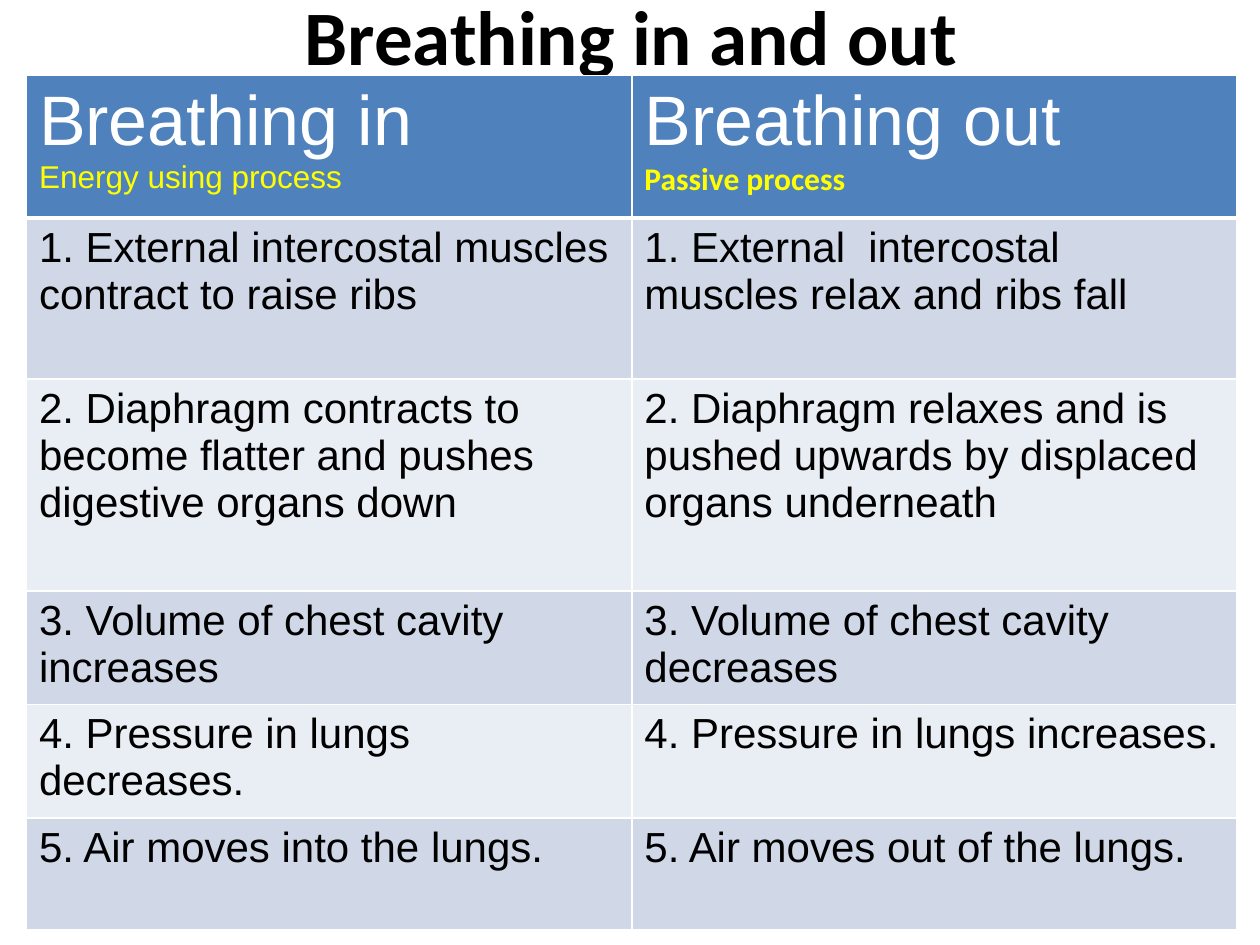
from lxml.etree import SubElement
from pptx import Presentation
from pptx.dml.color import RGBColor
from pptx.enum.text import MSO_ANCHOR as Anchor, PP_ALIGN as Align
from pptx.oxml.ns import qn
from pptx.util import Inches, Pt

BLACK, WHITE, YELLOW = "000000", "FFFFFF", "FFFF00"
HEADER_BLUE, BAND_DARK, BAND_LIGHT = "4F81BD", "D0D8E8", "E9EDF4"

HEADINGS = [
    ("Breathing in", "Energy using process", "Arial", False),
    ("Breathing out", "Passive process", "Calibri", True),
]
STEPS = [
    ("1. External intercostal muscles contract to raise ribs",
     "1. External  intercostal muscles relax and ribs fall"),
    ("2. Diaphragm contracts to become flatter and pushes digestive organs down",
     "2. Diaphragm relaxes and is pushed upwards by displaced organs underneath"),
    ("3. Volume of chest cavity increases", "3. Volume of chest cavity decreases"),
    ("4. Pressure in lungs decreases.", "4. Pressure in lungs increases."),
    ("5. Air moves into the lungs.", "5. Air moves out of the lungs."),
]
ROW_HEIGHTS = [11.3, 12.8, 16.8, 9, 9, 8.9]


def color(hex_string):
    return RGBColor.from_string(hex_string)


class Deck:
    """Holds the slide and its style; lengths count squares of a 100 by 75 grid."""

    columns, rows = 100, 75

    def __init__(self):
        self.presentation = Presentation()
        self.presentation.slide_width = Inches(10)
        self.presentation.slide_height = Inches(7.5)
        self.slide = self.presentation.slides.add_slide(self.presentation.slide_layouts[6])

    def across(self, count):
        return round(self.presentation.slide_width * count / self.columns)

    def down(self, count):
        return round(self.presentation.slide_height * count / self.rows)

    def box(self, left, top, width, height):
        return self.across(left), self.down(top), self.across(width), self.down(height)

    def set_lines(self, frame, lines):
        """Fill a text frame; each line is (text, size, font name, colour, bold)."""
        for number, (text, size, name, ink, bold) in enumerate(lines):
            paragraph = frame.add_paragraph() if number else frame.paragraphs[0]
            paragraph.text = text
            font = paragraph.font
            font.size, font.name, font.bold = Pt(size), name, bold
            font.color.rgb = color(ink)

    def title(self, text, *place):
        frame = self.slide.shapes.add_textbox(*self.box(*place)).text_frame
        frame.word_wrap = True
        frame.vertical_anchor = Anchor.MIDDLE
        self.set_lines(frame, [(text, 44, "Calibri", BLACK, True)])
        frame.paragraphs[0].alignment = Align.CENTER

    def table(self, left, top, width, row_heights, column_count):
        place = self.box(left, top, width, sum(row_heights))
        table = self.slide.shapes.add_table(len(row_heights), column_count, *place).table
        for row, height in zip(table.rows, row_heights):
            row.height = self.down(height)
        return table

    def cell(self, cell, fill, lines):
        cell.fill.solid()
        cell.fill.fore_color.rgb = color(fill)
        self.set_lines(cell.text_frame, lines)

    def borders(self, cell, ink, **widths):
        properties = cell._tc.get_or_add_tcPr()
        for position, (side, width) in enumerate(widths.items()):
            line = SubElement(properties, qn(f"a:ln{side}"), w=str(Pt(width)))
            SubElement(SubElement(line, qn("a:solidFill")), qn("a:srgbClr"), val=ink)
            properties.insert(position, line)

    def save(self):
        self.presentation.save("out.pptx")


def main():
    deck = Deck()
    deck.title("Breathing in and out", 5.1, -3.5, 90, 12.5)
    comparison = deck.table(2.1, 6, 96.1, ROW_HEIGHTS, len(HEADINGS))

    for column, (heading, effort, effort_font, bold) in enumerate(HEADINGS):
        header = comparison.cell(0, column)
        deck.cell(header, HEADER_BLUE, [
            (heading, 40, "Arial", WHITE, False),
            (effort, 18, effort_font, YELLOW, bold),
        ])
        deck.borders(header, WHITE, L=1, R=1, T=1, B=3)

    for row, step in enumerate(STEPS, start=1):
        band = BAND_DARK if row % 2 else BAND_LIGHT
        for column, text in enumerate(step):
            deck.cell(comparison.cell(row, column), band,
                      [(text, 24, "Arial", BLACK, False)])
    deck.save()


if __name__ == "__main__":
    main()
